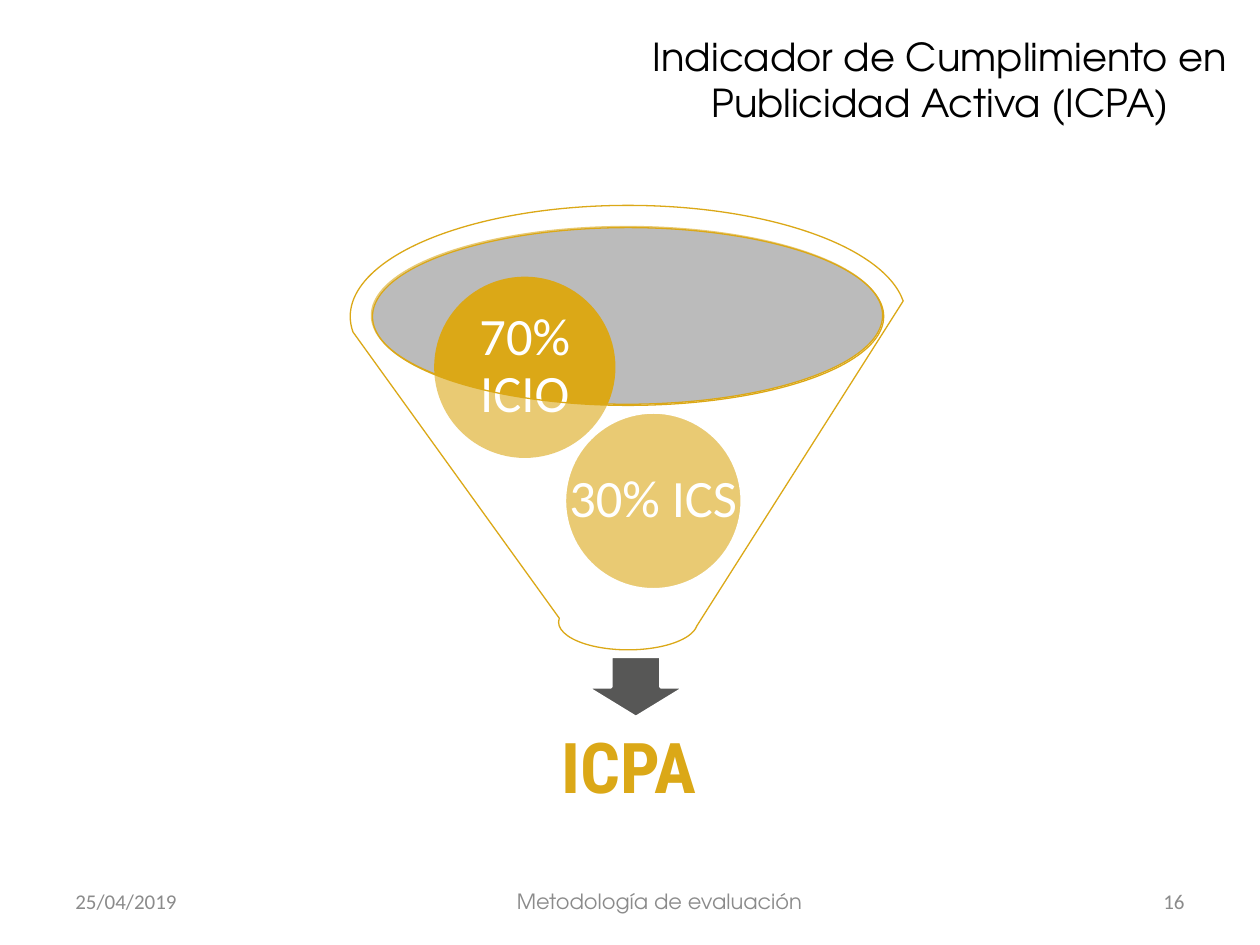
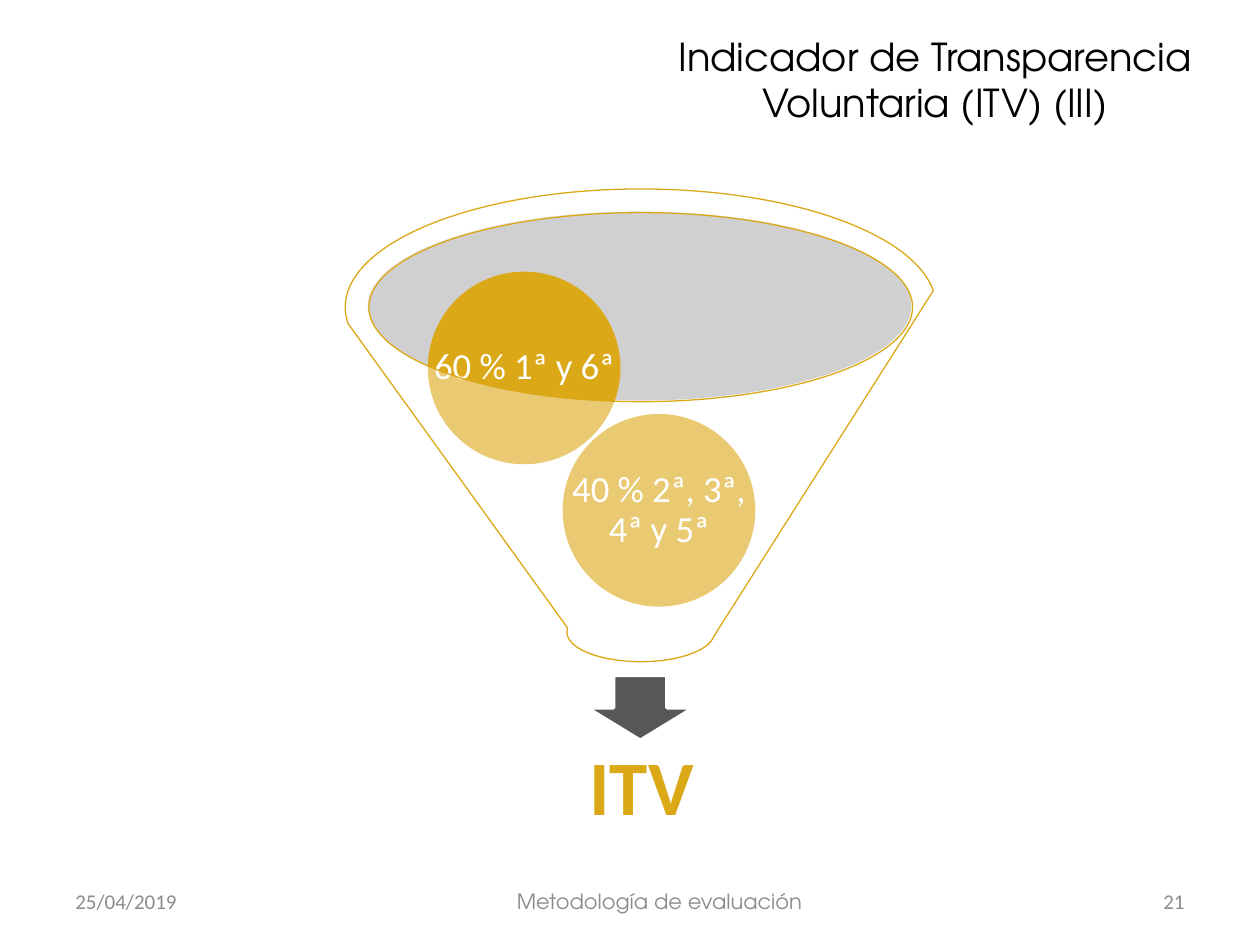
from lxml.etree import SubElement
from pptx import Presentation
from pptx.dml.color import RGBColor
from pptx.enum.shapes import MSO_SHAPE
from pptx.enum.text import MSO_ANCHOR, PP_ALIGN
from pptx.oxml.ns import qn
from pptx.util import Inches, Pt

COLORS = {
    "gold": "DBA817",
    "slate": "575756",
    "gray": "8B8B8B",
    "white": "FFFFFF",
    "black": "000000",
}
COLUMNS, ROWS = 100, 75
BODY, DISPLAY, CONDENSED = "Calibri", "TeX Gyre Adventor", "Roboto Condensed"
SIDE_INSETS, FOOTER_TOP, FOOTER_HEIGHT = (1, 0.5), 69.5, 4


class Deck:
    def __init__(self):
        self.prs = Presentation()
        self.prs.slide_width, self.prs.slide_height = Inches(10), Inches(7.5)
        self.column = self.prs.slide_width / COLUMNS
        self.row = self.prs.slide_height / ROWS
        self.slide = None

    def place(self, box):
        left, top, width, height = box
        return (round(left * self.column), round(top * self.row),
                round(width * self.column), round(height * self.row))

    def text(self, box, words, size, color, font=BODY, align=PP_ALIGN.CENTER,
             insets=SIDE_INSETS, bold=False, spacing=None):
        frame = self.slide.shapes.add_textbox(*self.place(box)).text_frame
        frame.word_wrap = True
        frame.vertical_anchor = MSO_ANCHOR.MIDDLE
        frame.margin_left = frame.margin_right = round(insets[0] * self.column)
        frame.margin_top = frame.margin_bottom = round(insets[1] * self.row)
        paragraph = frame.paragraphs[0]
        paragraph.text = words
        paragraph.alignment = align
        if spacing:
            paragraph.line_spacing = spacing
        paragraph.font.name = font
        paragraph.font.size = Pt(size)
        paragraph.font.bold = bold
        paragraph.font.color.rgb = RGBColor.from_string(COLORS[color])

    def shape(self, kind, box, fill, line=None, line_width=2, opacity=100):
        shape = self.slide.shapes.add_shape(kind, *self.place(box))
        shape.shadow.inherit = False
        shape.fill.solid()
        shape.fill.fore_color.rgb = RGBColor.from_string(COLORS[fill])
        if opacity < 100:
            color = shape._element.spPr.find(qn("a:solidFill")).find(qn("a:srgbClr"))
            SubElement(color, qn("a:alpha"), val=str(opacity * 1000))
        if line:
            shape.line.color.rgb = RGBColor.from_string(COLORS[line])
            shape.line.width = Pt(line_width)
        else:
            shape.line.fill.background()

    def page(self, title, title_left, number):
        self.slide = self.prs.slides.add_slide(self.prs.slide_layouts[6])
        self.text((title_left, 0, COLUMNS - title_left, 12.5), title, 22, "black", DISPLAY)
        footers = [
            (5, 10.3, "25/04/2019", BODY, PP_ALIGN.LEFT),
            (18.5, 67.7, "Metodología de evaluación", DISPLAY, PP_ALIGN.CENTER),
            (89.4, 5.6, number, BODY, PP_ALIGN.RIGHT),
        ]
        for left, width, words, font, align in footers:
            self.text((left, FOOTER_TOP, width, FOOTER_HEIGHT), words, 12, "gray", font, align)

    def funnel(self, left, top, width, mouth, arrow_at, weights, weight_size, inset,
               result, result_size, result_font):
        def part(x, y, w, h):
            share = width / 100
            return left + x * share, top + y * share, w * share, h * share

        mouth_fill, mouth_line = mouth
        self.shape(MSO_SHAPE.OVAL, part(3.8, 3.8, 92, 32), mouth_fill, mouth_line, 0.75, 40)
        self.shape(MSO_SHAPE.DOWN_ARROW, (*arrow_at, width * 0.18, width * 0.11),
                   "slate", "white")
        self.text(part(7.3, 91.1, 85.7, 21.3), result, result_size, "gold", result_font,
                  insets=(width * 0.07, width * 0.07), bold=True, spacing=0.9)
        diameter = width * 0.32
        for ball_left, ball_top, words, outline in weights:
            ball = (ball_left, ball_top, diameter, diameter)
            self.shape(MSO_SHAPE.OVAL, ball, "gold", outline)
            self.text(ball, words, weight_size, "white", insets=(inset, inset), spacing=0.9)
        self.shape(MSO_SHAPE.FUNNEL, part(0, 0, 100, 80), "white", "gold", 0.75, 40)


def main():
    deck = Deck()

    deck.page("Indicador de Cumplimiento en Publicidad Activa (ICPA)", 49.2, "16")
    deck.funnel(27.8, 16.3, 44.1, ("slate", "gold"), (46.5, 52.1),
                [(44.8, 32.7, "30% ICS", "white"), (34.6, 22.1, "70% ICIO", "gold")],
                30, 0.3, "ICPA", 40, CONDENSED)

    deck.page("Indicador de Transparencia Voluntaria (ITV) (III)", 48.4, "21")
    deck.funnel(27.4, 15, 46.9, ("gray", None), (46.6, 53.6),
                [(44.8, 33, "40 % 2ª, 3ª, 4ª y 5ª", "gold"),
                 (34.1, 21.7, "60 % 1ª y 6ª", "gold")],
                21, 0.3, "ITV", 44, BODY)

    deck.prs.save("out.pptx")


if __name__ == "__main__":
    main()
